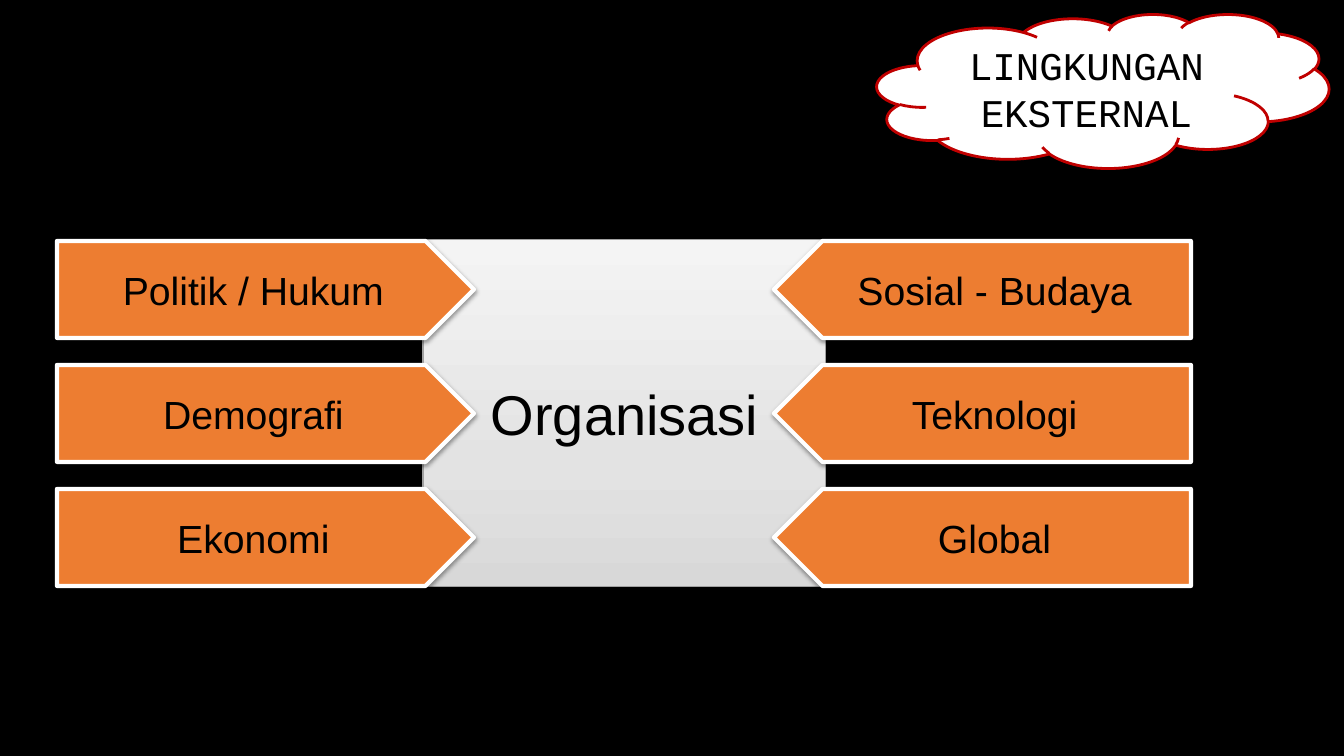
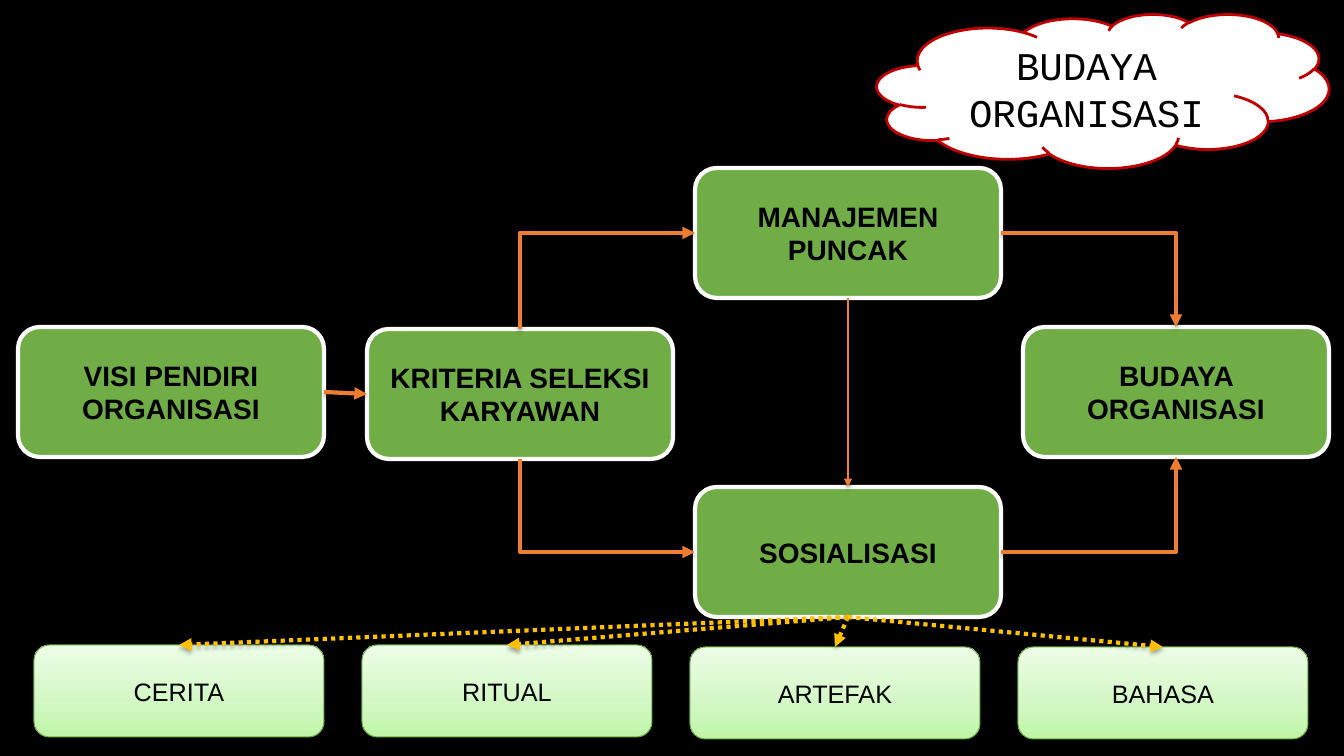
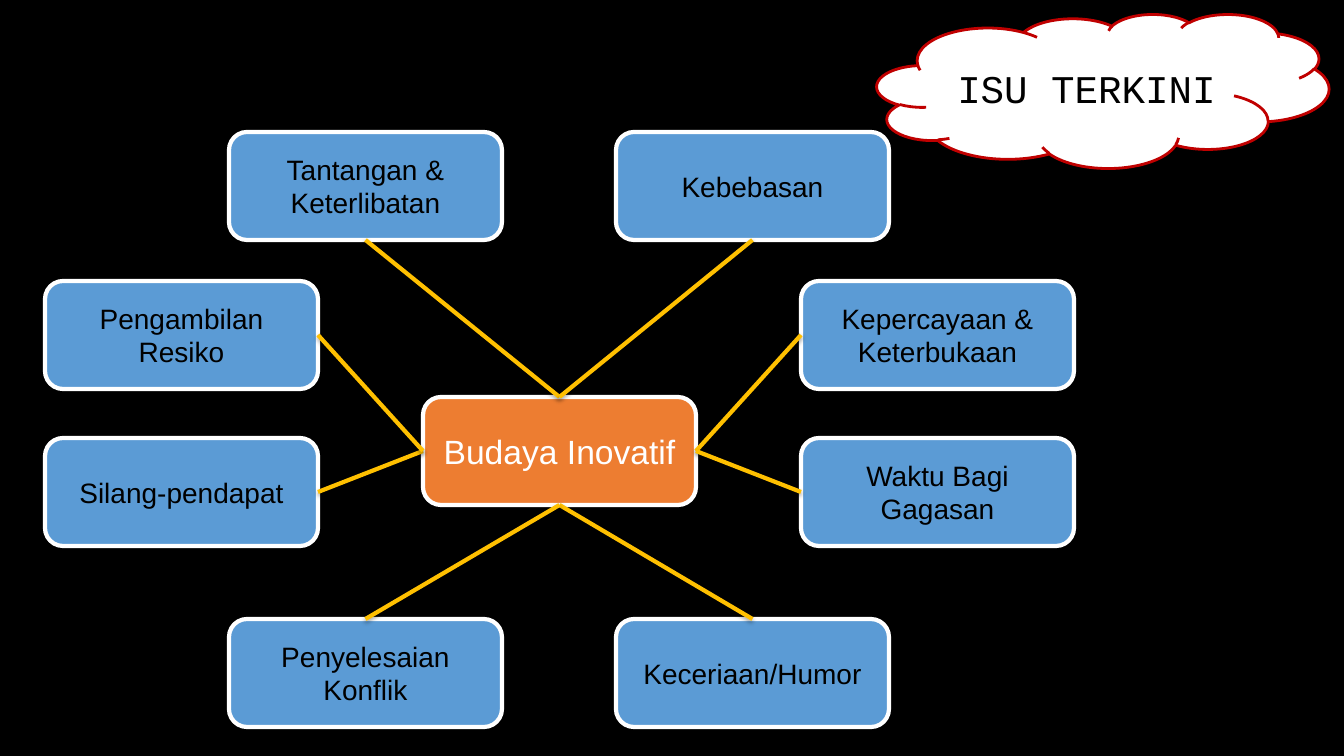
"""Builds three diagram slides on organisational culture."""
from copy import deepcopy
from dataclasses import dataclass

from pptx import Presentation
from pptx.dml.color import RGBColor
from pptx.enum.dml import MSO_LINE
from pptx.enum.shapes import MSO_CONNECTOR, MSO_SHAPE
from pptx.enum.text import MSO_ANCHOR, MSO_AUTO_SIZE, PP_ALIGN
from pptx.oxml import parse_xml
from pptx.oxml.ns import nsdecls, qn
from pptx.util import Emu, Inches, Pt

CLOUD, RECT = MSO_SHAPE.CLOUD, MSO_SHAPE.RECTANGLE
ROUND, PLATE = MSO_SHAPE.ROUNDED_RECTANGLE, MSO_SHAPE.PENTAGON
STRAIGHT, ELBOW = MSO_CONNECTOR.STRAIGHT, MSO_CONNECTOR.ELBOW
DOTTED = MSO_LINE.ROUND_DOT
CENTER, MIDDLE = PP_ALIGN.CENTER, MSO_ANCHOR.MIDDLE
NO_FIT = MSO_AUTO_SIZE.NONE
TOP, LEFT, BOTTOM, RIGHT = range(4)
TITLE_ONLY = 5
SCALE = Inches(7.5) / 756


@dataclass(frozen=True)
class Theme:
    """Colours, fonts and type sizes of the deck."""
    black: str = "000000"
    white: str = "FFFFFF"
    red: str = "C00000"
    orange: str = "ED7D31"
    green: str = "70AD47"
    blue: str = "5B9BD5"
    gold: str = "FFC000"
    grey_edge: str = "A1A1A1"
    green_edge: str = "6DAC43"
    grey_fade: tuple = ("D8D8D8", "E3E3E3", "F4F4F4")
    green_fade: tuple = ("BEF5A7", "D1F7C2", "EDFDE7")
    fade_stops: tuple = (0, 0.35, 1)
    body_font: str = "Arial"
    title_font: str = "Courier New"
    title: int = 28
    label: int = 28
    core: int = 40
    hub: int = 24
    box: int = 20
    leaf: int = 18
    border: int = 3
    thin: float = 0.75


T = Theme()


def px(n):
    """Turns px into EMU."""
    return Emu(round(n * SCALE))


def rgb(color):
    """Turns a hex string into a colour."""
    return RGBColor.from_string(color)


class Deck:
    """Holds the presentation, its style and the current slide."""

    def __init__(self):
        """Sets the slide size and the shared background."""
        self.prs = Presentation()
        self.prs.slide_width, self.prs.slide_height = px(1344), px(756)
        fill = self.prs.slide_master.background.fill
        fill.solid()
        fill.fore_color.rgb = rgb(T.black)

    def slide(self, title):
        """Adds a slide with its title on a cloud."""
        self.s = self.prs.slides.add_slide(self.prs.slide_layouts[TITLE_ONLY])
        cloud = self.shape(CLOUD, (877, 14, 452, 154), T.white, T.red, 2)
        cloud.shadow.inherit = False
        sp = self.s.shapes.title
        cloud._element.addnext(sp._element)
        self.place(sp, (939, 37, 295, 102))
        self.text(sp, title, T.title, font=T.title_font)

    def place(self, sp, box):
        """Moves and sizes a shape."""
        sp.left, sp.top, sp.width, sp.height = map(px, box)

    def text(self, sp, text, size, color=T.black, bold=False, font=T.body_font):
        """Writes one centred paragraph."""
        tf = sp.text_frame
        tf.text = text
        tf.word_wrap, tf.auto_size, tf.vertical_anchor = True, NO_FIT, MIDDLE
        p = tf.paragraphs[0]
        p.alignment = CENTER
        f = p.runs[0].font
        f.name, f.size, f.bold = font, Pt(size), bold
        f.color.rgb = rgb(color)

    def shape(self, kind, box, fill, edge, width):
        """Adds a preset shape with a plain or fading fill."""
        sp = self.s.shapes.add_shape(kind, *map(px, box))
        if isinstance(fill, tuple):
            self.fade(sp, fill)
        else:
            sp.fill.solid()
            sp.fill.fore_color.rgb = rgb(fill)
        sp.line.color.rgb = rgb(edge)
        sp.line.width = Pt(width)
        return sp

    def fade(self, sp, colors):
        """Fills a shape with a three-stop gradient running upwards."""
        sp.fill.gradient()
        sp.fill.gradient_angle = 90
        stops = sp._element.spPr.find(".//" + qn("a:gsLst"))
        stops.append(deepcopy(stops[0]))
        for stop, color, position in zip(sp.fill.gradient_stops, colors, T.fade_stops):
            stop.color.rgb = rgb(color)
            stop.position = position

    def shadow(self, sp, alpha, dist):
        """Gives a shape or connector a soft shadow below."""
        sp._element.spPr.append(parse_xml(
            f'<a:effectLst {nsdecls("a")}><a:outerShdw blurRad="40000" dist="{dist}" '
            f'dir="5400000" rotWithShape="0"><a:srgbClr val="{T.black}">'
            f'<a:alpha val="{alpha}000"/></a:srgbClr></a:outerShdw></a:effectLst>'))

    def box(self, text, box, fill, size, kind=ROUND, edge=T.white, width=T.border,
            color=T.black, bold=False, flip=False):
        """Adds a labelled shape with a shadow."""
        sp = self.shape(kind, box, fill, edge, width)
        self.shadow(sp, 38, 20000)
        if flip:
            sp._element.spPr.xfrm.set("flipH", "1")
        self.text(sp, text, size, color, bold)
        return sp

    def link(self, a, a_side, b, b_side, color, width=T.border, arrow=True,
             dash=None, kind=STRAIGHT):
        """Joins the sides of two shapes."""
        c = self.s.shapes.add_connector(kind, 0, 0, 0, 0)
        c.begin_connect(a, a_side)
        c.end_connect(b, b_side)
        c.line.color.rgb = rgb(color)
        c.line.width = Pt(width)
        if dash:
            c.line.dash_style = dash
        if arrow:
            c.line._get_or_add_ln().append(
                parse_xml(f'<a:tailEnd {nsdecls("a")} type="triangle"/>'))
        self.shadow(c, 35, 23000)
        if kind == ELBOW:
            self.bend(c, a_side in (TOP, BOTTOM))

    def bend(self, c, vertical_first):
        """Makes a connector turn once, starting upright if asked."""
        spPr = c._element.spPr
        spPr.find(qn("a:prstGeom")).set("prst", "bentConnector2")
        if not vertical_first:
            return
        up = c.end_y < c.begin_y
        mid_x, mid_y = c.left + c.width // 2, c.top + c.height // 2
        c.width, c.height = c.height, c.width
        c.left, c.top = mid_x - c.width // 2, mid_y - c.height // 2
        spPr.xfrm.set("rot", "5400000" if up else "16200000")
        spPr.xfrm.set("flipH", "1")
        spPr.xfrm.set("flipV", "1" if up else "0")


def environment(d):
    """Draws the outside forces around the organisation."""
    d.slide("LINGKUNGAN EKSTERNAL")
    d.box("Organisasi", (423, 240, 403, 347), T.grey_fade, T.core, RECT,
          T.grey_edge, T.thin)
    sides = ((57, False, ("Politik / Hukum", "Demografi", "Ekonomi")),
             (774, True, ("Sosial - Budaya", "Teknologi", "Global")))
    for x, flip, labels in sides:
        for i, label in enumerate(labels):
            d.box(label, (x, 241 + 124 * i, 417, 97), T.orange, T.label, PLATE, flip=flip)


def culture(d):
    """Draws how organisational culture is formed."""
    d.slide("BUDAYA ORGANISASI")
    steps = (("VISI PENDIRI ORGANISASI", 18, 327),
             ("KRITERIA SELEKSI KARYAWAN", 367, 329),
             ("MANAJEMEN PUNCAK", 695, 168),
             ("SOSIALISASI", 695, 487),
             ("BUDAYA ORGANISASI", 1023, 327))
    vision, criteria, managers, social, result = [
        d.box(label, (x, y, 306, 130), T.green, T.box, bold=True) for label, x, y in steps]
    d.link(vision, RIGHT, criteria, LEFT, T.orange)
    d.link(managers, BOTTOM, social, TOP, T.orange, 2)
    for a, a_side, b, b_side in ((criteria, TOP, managers, LEFT),
                                 (criteria, BOTTOM, social, LEFT),
                                 (social, RIGHT, result, BOTTOM),
                                 (managers, RIGHT, result, TOP)):
        d.link(a, a_side, b, b_side, T.orange, kind=ELBOW)
    leaves = (("CERITA", 645), ("RITUAL", 645), ("ARTEFAK", 647), ("BAHASA", 647))
    for i, (label, y) in enumerate(leaves):
        leaf = d.box(label, (34 + 328 * i, y, 290, 92), T.green_fade, T.leaf,
                     edge=T.green_edge, width=T.thin)
        d.link(social, BOTTOM, leaf, TOP, T.gold, dash=DOTTED)


def issues(d):
    """Draws the traits around an innovative culture."""
    d.slide("ISU TERKINI")
    size = (273, 108)
    hub = d.box("Budaya Inovatif", (423, 397, *size), T.orange, T.hub, color=T.white)
    traits = (("Kepercayaan & Keterbukaan", 801, 281, RIGHT),
              ("Waktu Bagi Gagasan", 801, 438, RIGHT),
              ("Keceriaan/Humor", 616, 619, BOTTOM),
              ("Penyelesaian Konflik", 229, 619, BOTTOM),
              ("Silang-pendapat", 45, 438, LEFT),
              ("Pengambilan Resiko", 45, 281, LEFT),
              ("Tantangan & Keterlibatan", 229, 132, TOP),
              ("Kebebasan", 616, 132, TOP))
    for label, x, y, side in traits:
        trait = d.box(label, (x, y, *size), T.blue, T.box)
        d.link(hub, side, trait, (side + 2) % 4, T.gold, arrow=False)


def main():
    """Builds and saves the deck."""
    d = Deck()
    environment(d)
    culture(d)
    issues(d)
    d.prs.save("out.pptx")


if __name__ == "__main__":
    main()
